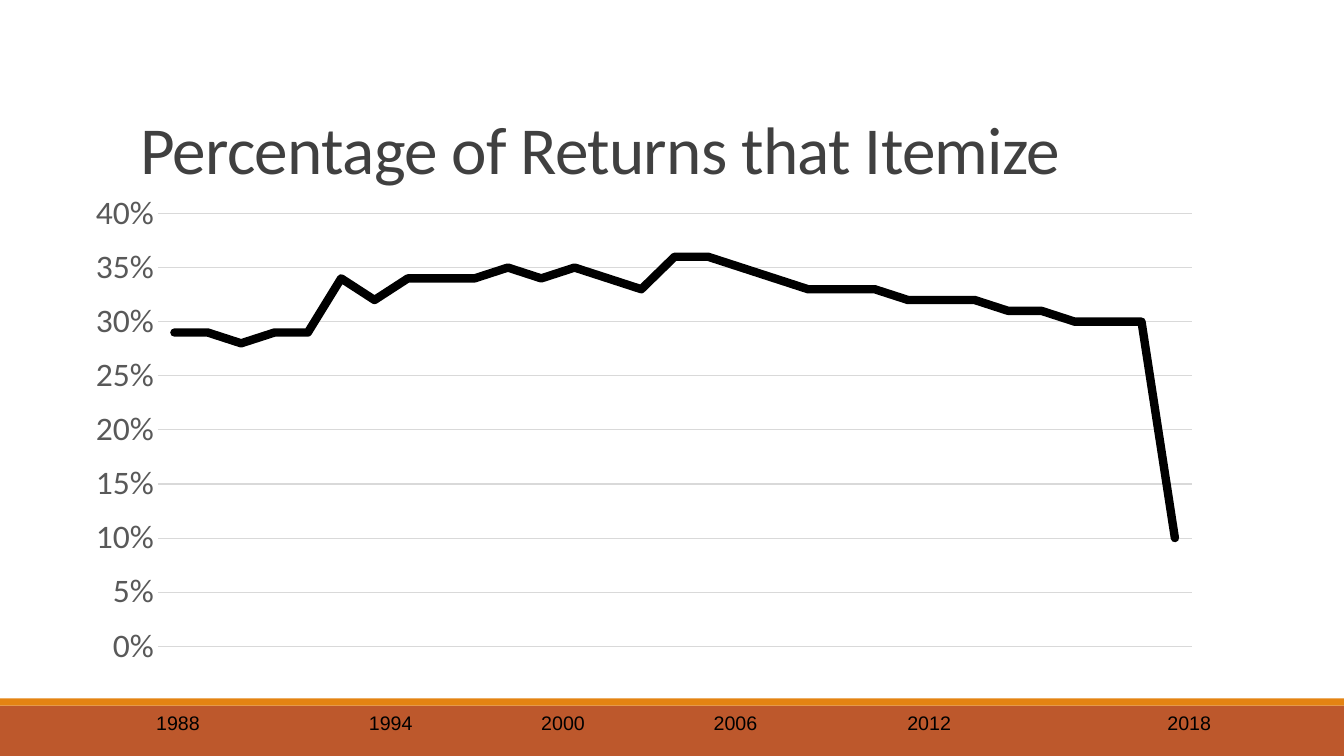
import pptx
import pptx.chart.data
import pptx.dml.color
import pptx.enum.chart
import pptx.enum.shapes
import pptx.enum.text
import pptx.oxml
import pptx.oxml.ns
import pptx.util

RGBColor = pptx.dml.color.RGBColor
Inches = pptx.util.Inches
Pt = pptx.util.Pt

# Content
TITLE = "Percentage of Returns that Itemize"
PERCENTAGES = [29, 29, 28, 29, 29, 34, 32, 34, 34, 34, 35, 34, 35, 34, 33, 36,
               36, 35, 34, 33, 33, 33, 32, 32, 32, 31, 31, 30, 30, 30, 10]
YEAR_LEFTS = {"1988": 1.39, "1994": 3.5, "2000": 5.21,
              "2006": 6.92, "2012": 8.84, "2018": 11.42}

# Layout and colours
WIDTH, HEIGHT = 13.33, 7.5
FOOTER_TOP, STRIPE_HEIGHT = 7, 0.07
TITLE_BOX = (1.29, 0.49, 10.5, 1.43)
CHART_BOX = (0.95, 1.92, 11.09, 4.69)
PLOT_SHARES = {"x": 0.054, "y": 0.03, "w": 0.926, "h": 0.94}
YEAR_SIZE = (0.75, 0.34)
BLACK = RGBColor(0x00, 0x00, 0x00)
TITLE_GRAY = RGBColor(0x40, 0x40, 0x40)
AXIS_GRAY = RGBColor(0x59, 0x59, 0x59)
GRID_GRAY = RGBColor(0xD9, 0xD9, 0xD9)
RUST = RGBColor(0xBD, 0x58, 0x2C)
ORANGE = RGBColor(0xE4, 0x83, 0x12)


def inches(*lengths):
    return [Inches(length) for length in lengths]


def set_all(target, **values):
    for name, value in values.items():
        setattr(target, name, value)


def format_font(font, name, size, color):
    set_all(font, name=name, size=Pt(size), bold=False)
    font.color.rgb = color


def add_band(slide, top, height, color):
    band = slide.shapes.add_shape(pptx.enum.shapes.MSO_SHAPE.RECTANGLE,
                                  *inches(0, top, WIDTH, height))
    band.shadow.inherit = False
    band.fill.solid()
    band.fill.fore_color.rgb = color
    band.line.fill.background()


def add_title(slide):
    title = slide.shapes.title
    left, top, width, height = inches(*TITLE_BOX)
    set_all(title, left=left, top=top, width=width, height=height)
    frame = title.text_frame
    set_all(frame, text=TITLE, word_wrap=True,
            vertical_anchor=pptx.enum.text.MSO_ANCHOR.BOTTOM,
            auto_size=pptx.enum.text.MSO_AUTO_SIZE.NONE)
    paragraph = frame.paragraphs[0]
    set_all(paragraph, alignment=pptx.enum.text.PP_ALIGN.LEFT, line_spacing=0.85)
    run = paragraph.runs[0]
    format_font(run.font, "Calibri", 48, TITLE_GRAY)
    run.font._element.set("spc", "-50")


def place_plot(chart):
    plot_area = chart._chartSpace.chart.plotArea
    for old_layout in plot_area.findall(pptx.oxml.ns.qn("c:layout")):
        plot_area.remove(old_layout)
    settings = {"layoutTarget": "inner", "xMode": "edge", "yMode": "edge", **PLOT_SHARES}
    children = "".join(f'<c:{tag} val="{value}"/>' for tag, value in settings.items())
    plot_area.insert(0, pptx.oxml.parse_xml(
        f'<c:layout {pptx.oxml.ns.nsdecls("c")}><c:manualLayout>'
        f'{children}</c:manualLayout></c:layout>'))


def add_line_chart(slide):
    data = pptx.chart.data.CategoryChartData(number_format="0%")
    data.categories = [str(number + 1) for number in range(len(PERCENTAGES))]
    data.add_series("Series 1", [percentage / 100 for percentage in PERCENTAGES])
    chart = slide.shapes.add_chart(pptx.enum.chart.XL_CHART_TYPE.LINE,
                                   *inches(*CHART_BOX), data).chart
    set_all(chart, has_legend=False, has_title=False)
    format_font(chart.font, "Calibri", 24, BLACK)
    place_plot(chart)

    # Axes
    chart.category_axis.visible = False
    axis = chart.value_axis
    no_tick = pptx.enum.chart.XL_TICK_MARK.NONE
    set_all(axis, minimum_scale=0, maximum_scale=0.4, major_unit=0.05,
            major_tick_mark=no_tick, minor_tick_mark=no_tick)
    set_all(axis.tick_labels, number_format="0%", number_format_is_linked=False)
    format_font(axis.tick_labels.font, "Calibri", 24, AXIS_GRAY)
    axis.format.line.fill.background()
    grid = axis.major_gridlines.format.line
    grid.color.rgb = GRID_GRAY
    grid.width = Pt(0.75)

    # Data line with round ends
    chart.plots[0].vary_by_categories = False
    series = chart.plots[0].series[0]
    series.smooth = False
    series.marker.style = pptx.enum.chart.XL_MARKER_STYLE.NONE
    line = series.format.line
    line.color.rgb = BLACK
    line.width = Pt(6)
    outline = line._get_or_add_ln()
    outline.set("cap", "rnd")
    outline.append(pptx.oxml.parse_xml(f'<a:round {pptx.oxml.ns.nsdecls("a")}/>'))


def add_year(slide, year, left):
    box = slide.shapes.add_textbox(*inches(left, FOOTER_TOP, *YEAR_SIZE))
    frame = box.text_frame
    set_all(frame, text=year, word_wrap=True,
            auto_size=pptx.enum.text.MSO_AUTO_SIZE.SHAPE_TO_FIT_TEXT)
    paragraph = frame.paragraphs[0]
    paragraph.alignment = pptx.enum.text.PP_ALIGN.CENTER
    format_font(paragraph.runs[0].font, "Arial", 14, BLACK)


def main():
    presentation = pptx.Presentation()
    set_all(presentation, slide_width=Inches(WIDTH), slide_height=Inches(HEIGHT))
    slide = presentation.slides.add_slide(presentation.slide_layouts[5])
    add_band(slide, FOOTER_TOP, HEIGHT - FOOTER_TOP, RUST)
    add_band(slide, FOOTER_TOP - STRIPE_HEIGHT, STRIPE_HEIGHT, ORANGE)
    add_title(slide)
    add_line_chart(slide)
    for year, left in YEAR_LEFTS.items():
        add_year(slide, year, left)
    presentation.save("out.pptx")


if __name__ == "__main__":
    main()
